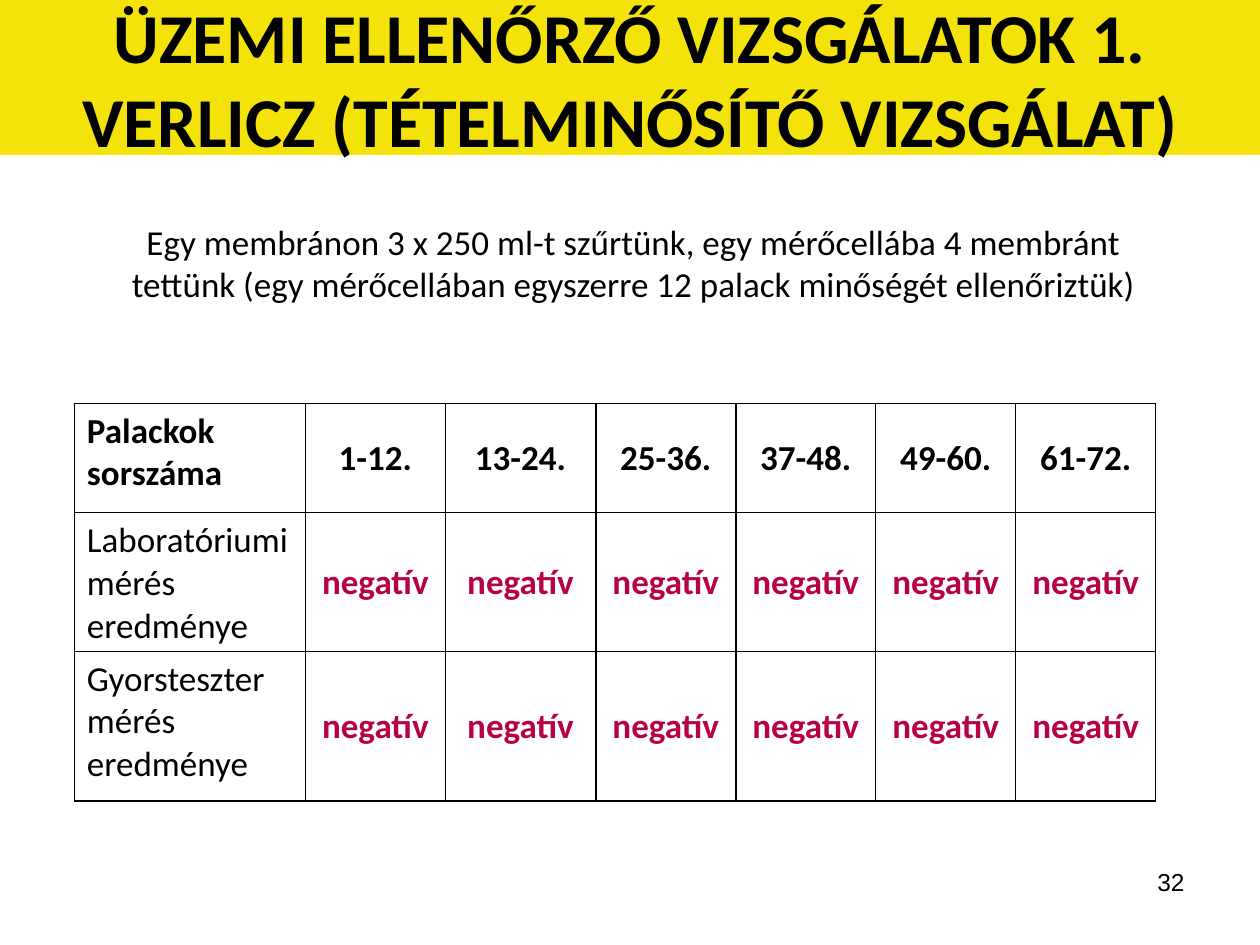
import pptx
import pptx.dml.color
import pptx.enum.shapes
import pptx.enum.text
import pptx.oxml
import pptx.oxml.ns
import pptx.util

Pt = pptx.util.Pt
ALIGN = pptx.enum.text.PP_ALIGN
ANCHOR = pptx.enum.text.MSO_ANCHOR
COLORS = {"text": "000000", "band": "F4E30A", "result": "B80047", "border": "000000"}
COLUMN_WIDTHS = [132, 80, 86, 80, 80, 80, 80]
ROW_HEIGHTS = [62.5, 76.5, 85.5]


def rgb(name):
    return pptx.dml.color.RGBColor.from_string(COLORS[name])


def write(tf, text, size=20, font="Calibri", color="text", bold=False,
          align=ALIGN.LEFT, anchor=ANCHOR.TOP):
    """Fill a text frame with one formatted paragraph; \\v breaks the line."""
    tf.word_wrap = True
    tf.vertical_anchor = anchor
    p = tf.paragraphs[0]
    p.text = text
    p.alignment = align
    for r in p.runs:
        r.font.size = Pt(size)
        r.font.name = font
        r.font.bold = bold
        r.font.color.rgb = rgb(color)


def add_text(s, box, text, margins=None, **style):
    tf = s.shapes.add_textbox(*map(Pt, box)).text_frame
    if margins:
        tf.margin_left, tf.margin_top, tf.margin_right, tf.margin_bottom = map(Pt, margins)
    write(tf, text, **style)


def add_title_band(s, text):
    sp = s.shapes.add_shape(pptx.enum.shapes.MSO_SHAPE.RECTANGLE, 0, 0, Pt(720), Pt(88.5))
    sp.shadow.inherit = False
    sp.fill.solid()
    sp.fill.fore_color.rgb = rgb("band")
    sp.line.fill.background()
    write(sp.text_frame, text, size=40, bold=True, align=ALIGN.CENTER, anchor=ANCHOR.MIDDLE)


def set_borders(cell):
    tcPr = cell._tc.get_or_add_tcPr()
    for side in ("lnL", "lnR", "lnT", "lnB"):
        tcPr.append(pptx.oxml.parse_xml(
            f'<a:{side} {pptx.oxml.ns.nsdecls("a")} w="{Pt(1)}"><a:solidFill>'
            f'<a:srgbClr val="{COLORS["border"]}"/></a:solidFill></a:{side}>'))


def add_results_table(s, rows):
    frame = s.shapes.add_table(len(rows), len(rows[0]), Pt(42.5), Pt(230.5),
                               Pt(sum(COLUMN_WIDTHS)), Pt(sum(ROW_HEIGHTS)))
    table = frame.table
    table.first_row = table.horz_banding = False
    for column, width in zip(table.columns, COLUMN_WIDTHS):
        column.width = Pt(width)
    for i, (row, height) in enumerate(zip(rows, ROW_HEIGHTS)):
        table.rows[i].height = Pt(height)
        for j, text in enumerate(row):
            cell = table.cell(i, j)
            set_borders(cell)
            cell.fill.background()
            write(cell.text_frame, text, bold=i == 0 or j > 0,
                  color="result" if i and j else "text",
                  align=ALIGN.CENTER if j else ALIGN.LEFT)
            cell.vertical_anchor = ANCHOR.MIDDLE if j else ANCHOR.TOP


def main():
    prs = pptx.Presentation()
    prs.slide_width, prs.slide_height = Pt(720), Pt(540)
    s = prs.slides.add_slide(prs.slide_layouts[6])

    add_text(s, (516, 492, 168, 37.5), "32", size=14, font="Arial", align=ALIGN.RIGHT)
    add_title_band(s, "ÜZEMI ELLENŐRZŐ VIZSGÁLATOK 1.\vVERLICZ (TÉTELMINŐSÍTŐ VIZSGÁLAT)")
    add_text(s, (36, 126, 619, 59),
             "Egy membránon 3 x 250 ml-t szűrtünk, egy mérőcellába 4 membránt tettünk "
             "(egy mérőcellában egyszerre 12 palack minőségét ellenőriztük)",
             margins=(33, 0, 0, 0), align=ALIGN.CENTER)

    ranges = [f"{first}-{first + 11}." for first in range(1, 72, 12)]
    negatives = ["negatív"] * len(ranges)
    add_results_table(s, [
        ["Palackok sorszáma"] + ranges,
        ["Laboratóriumi mérés eredménye"] + negatives,
        ["Gyorsteszter mérés eredménye"] + negatives,
    ])
    prs.save("out.pptx")


if __name__ == "__main__":
    main()
